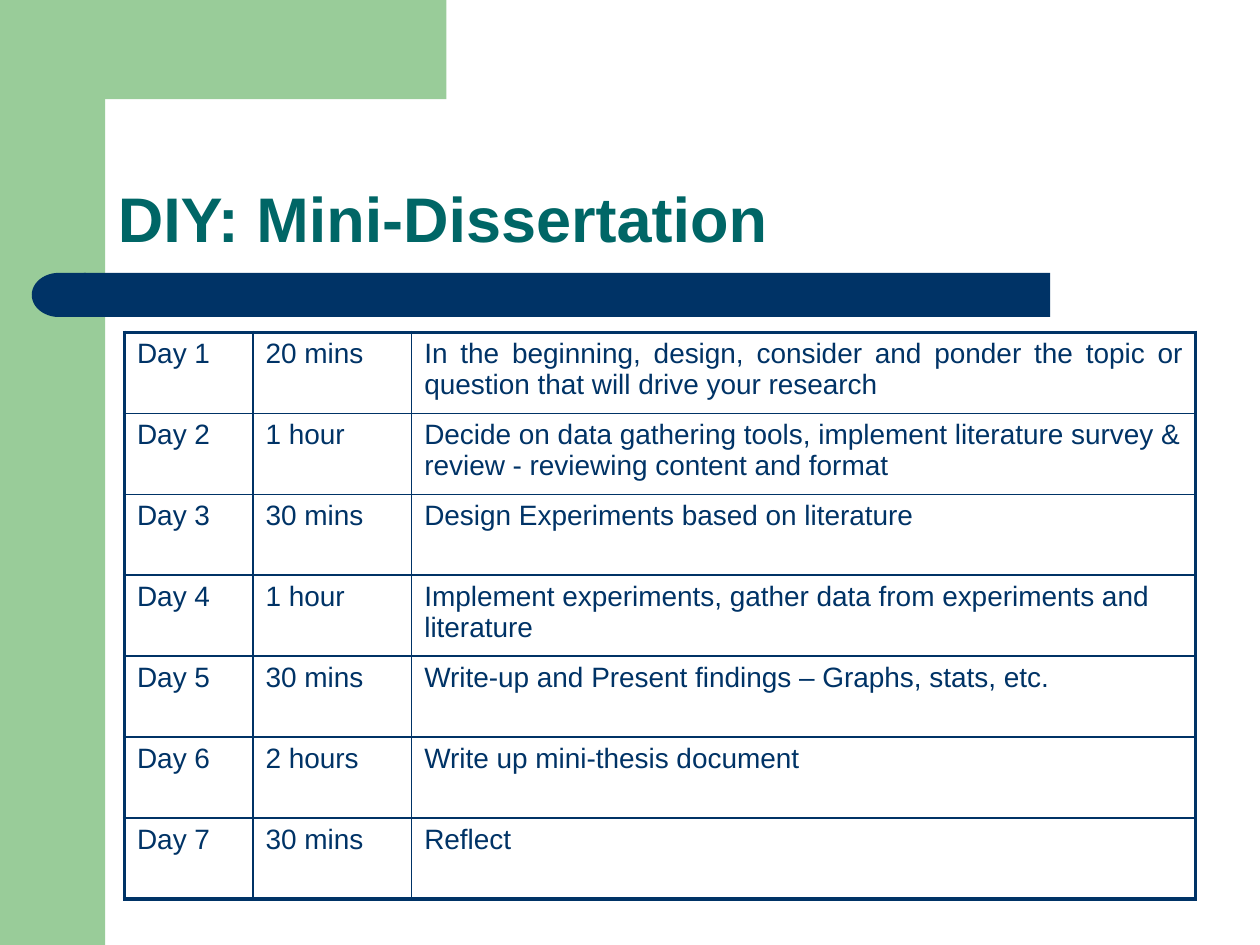
import math

from lxml import etree
from pptx import Presentation
from pptx.dml.color import RGBColor
from pptx.enum.shapes import MSO_SHAPE
from pptx.enum.text import MSO_ANCHOR, MSO_AUTO_SIZE, PP_ALIGN
from pptx.oxml.ns import qn
from pptx.util import Cm, Pt

RECT, DELAY = MSO_SHAPE.RECTANGLE, MSO_SHAPE.FLOWCHART_DELAY
BOTTOM, NO_FIT = MSO_ANCHOR.BOTTOM, MSO_AUTO_SIZE.NONE
LEFT, JUSTIFY = PP_ALIGN.LEFT, PP_ALIGN.JUSTIFY

GREEN = RGBColor(0x99, 0xCC, 0x99)
NAVY = RGBColor(0x00, 0x33, 0x66)
TEAL = RGBColor(0x00, 0x66, 0x66)

TITLE_FONT = {"name": "Arial", "size": Pt(36), "bold": True}
CELL_FONT = {"name": "Arial", "size": Pt(16), "bold": False}
THIN, THICK = Pt(1), Pt(2.25)
COLUMNS = (2.59, 3.2, 15.8)
TABLE_HEIGHT = 11.43
PLAN = (
    ("Day 1", "20 mins", "In the beginning, design, consider and ponder the topic or "
                         "question that will drive your research"),
    ("Day 2", "1 hour", "Decide on data gathering tools, implement literature survey & "
                        "review - reviewing content and format"),
    ("Day 3", "30 mins", "Design Experiments based on literature"),
    ("Day 4", "1 hour", "Implement experiments, gather data from experiments and literature"),
    ("Day 5", "30 mins", "Write-up and Present findings – Graphs, stats, etc."),
    ("Day 6", "2 hours", "Write up mini-thesis document"),
    ("Day 7", "30 mins", "Reflect"),
)


def paint(sp, color):
    """Give a shape a flat fill with no line or shadow."""
    sp.shadow.inherit = False
    sp.fill.solid()
    sp.fill.fore_color.rgb = color
    sp.line.fill.background()


def format_font(font, values, color):
    """Apply a dict of font values and a colour."""
    for name, value in values.items():
        setattr(font, name, value)
    font.color.rgb = color


def add_block(s, kind, box, color):
    """Add a flat preset shape in a box given in centimetres."""
    sp = s.shapes.add_shape(kind, *map(Cm, box))
    paint(sp, color)
    return sp


def add_corner(s):
    """Add the green top band with its rounded inner corner."""
    arc = [(2.82 - 0.71 * math.sin(a), 2.95 - 0.84 * math.cos(a))
           for a in (math.radians(d) for d in range(0, 91, 10))]
    points = [(8.89, 0), (8.89, 2.11), *arc, (2.11, 3.25), (1.27, 3.25), (1.27, 0)]
    builder = s.shapes.build_freeform(*points[0], scale=Cm(1))
    builder.add_line_segments(points[1:], close=True)
    paint(builder.convert_to_shape(), GREEN)


def add_title(s, text):
    """Place and format the title placeholder."""
    sp = s.shapes.title
    sp.left, sp.top, sp.width, sp.height = map(Cm, (2.12, 2.12, 22.01, 3.17))
    tf = sp.text_frame
    tf.word_wrap, tf.auto_size, tf.vertical_anchor = True, NO_FIT, BOTTOM
    p = tf.paragraphs[0]
    p.alignment, p.line_spacing = LEFT, 0.9
    r = p.add_run()
    r.text = text
    format_font(r.font, TITLE_FONT, TEAL)


def set_borders(cell, widths):
    """Draw the left, right, top and bottom borders of a cell."""
    tc_pr = cell._tc.get_or_add_tcPr()
    for i, (side, width) in enumerate(zip("LRTB", widths)):
        ln = etree.Element(qn(f"a:ln{side}"), w=str(width))
        fill = etree.SubElement(ln, qn("a:solidFill"))
        etree.SubElement(fill, qn("a:srgbClr"), val=str(NAVY))
        tc_pr.insert(i, ln)


def add_plan(s):
    """Add the day-by-day table with a thick outer frame."""
    rows, cols = len(PLAN), len(COLUMNS)
    table = s.shapes.add_table(rows, cols, Cm(2.51), Cm(6.7),
                               Cm(sum(COLUMNS)), Cm(TABLE_HEIGHT)).table
    table.first_row = table.horz_banding = False
    for column, width in zip(table.columns, COLUMNS):
        column.width = Cm(width)
    for i, entry in enumerate(PLAN):
        for j, text in enumerate(entry):
            cell = table.cell(i, j)
            cell.fill.background()
            outer = (j == 0, j == cols - 1, i == 0, i == rows - 1)
            set_borders(cell, [THICK if edge else THIN for edge in outer])
            p = cell.text_frame.paragraphs[0]
            p.alignment = JUSTIFY if (i, j) == (0, cols - 1) else LEFT
            r = p.add_run()
            r.text = text
            format_font(r.font, CELL_FONT, NAVY)


def main():
    """Build the slide and save it."""
    prs = Presentation()
    prs.slide_width, prs.slide_height = Cm(25.4), Cm(19.05)
    s = prs.slides.add_slide(prs.slide_layouts[5])
    add_block(s, RECT, (0, 0, 2.12, 19.05), GREEN)
    add_corner(s)
    add_block(s, RECT, (1.69, 5.5, 19.48, 0.89), NAVY)
    add_block(s, DELAY, (0.64, 5.5, 1.09, 0.89), NAVY).rotation = 180
    add_title(s, "DIY: Mini-Dissertation")
    add_plan(s)
    prs.save("out.pptx")


if __name__ == "__main__":
    main()
